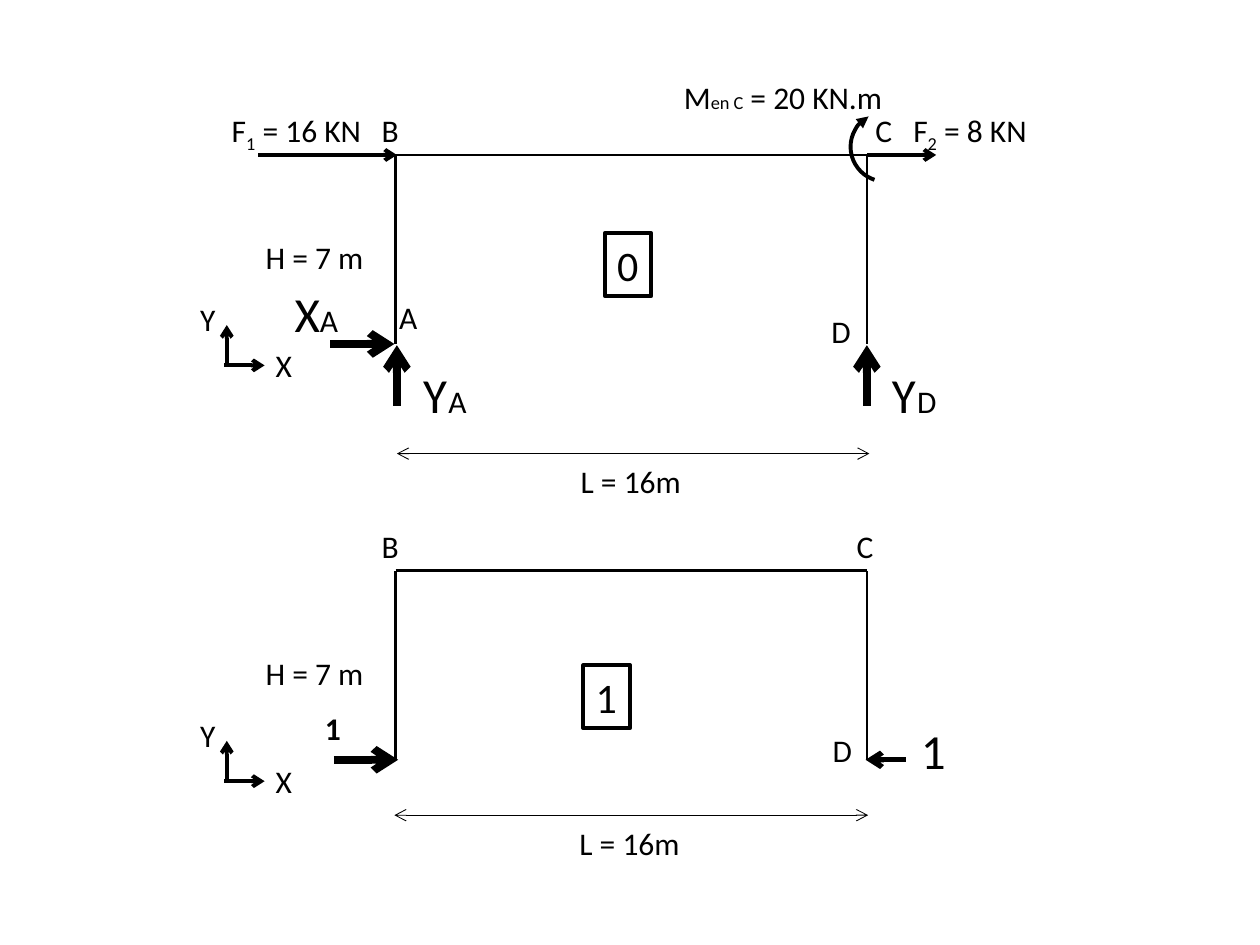
from dataclasses import dataclass

from lxml.etree import SubElement
from pptx import Presentation
from pptx.dml.color import RGBColor
from pptx.enum.shapes import MSO_CONNECTOR as Conn, MSO_SHAPE as Kind
from pptx.enum.text import MSO_ANCHOR as Anchor, MSO_AUTO_SIZE as Fit, PP_ALIGN as Align
from pptx.oxml.ns import qn
from pptx.util import Inches, Pt

INK = "000000"
LEFT, RIGHT = 3.14, 6.88
TOPS = (1.23, 4.53)
HIGH = 1.5


@dataclass
class Run:
    text: str
    size: float = 18
    bold: bool = False
    base: int = 0


@dataclass
class Label:
    x: float
    y: float
    w: float
    runs: list[Run]
    h: float = 0.4


@dataclass
class Line:
    x1: float
    y1: float
    x2: float
    y2: float
    width: float = 1.5
    head: str = ""
    tail: str = ""


def paint(target, color: str) -> None:
    """Colour a font or the fill of a line."""
    rgb = RGBColor.from_string(color)
    if hasattr(target, "color"):
        target.color.rgb = rgb
    else:
        target.solid()
        target.fore_color.rgb = rgb


def set_line(shape, width: float, head: str = "", tail: str = "") -> None:
    paint(shape.line.fill, INK)
    shape.line.width = Pt(width)
    ln = shape.line.fill._xPr
    for tag, kind in (("a:headEnd", head), ("a:tailEnd", tail)):
        if kind:
            SubElement(ln, qn(tag)).set("type", kind)


def draw_line(shapes, line: Line) -> None:
    ends = [Inches(v) for v in (line.x1, line.y1, line.x2, line.y2)]
    link = shapes.add_connector(Conn.STRAIGHT, *ends)
    set_line(link, line.width, line.head, line.tail)
    SubElement(link._element.spPr, qn("a:effectLst"))


def arrow(shapes, x1: float, y1: float, x2: float, y2: float, width: float) -> None:
    draw_line(shapes, Line(x1, y1, x2, y2, width, tail="arrow"))


def fill_text(shape, runs: list[Run]) -> None:
    frame = shape.text_frame
    frame.word_wrap = False
    frame.auto_size = Fit.SHAPE_TO_FIT_TEXT
    frame.vertical_anchor = Anchor.TOP
    par = frame.paragraphs[0]
    par.alignment = Align.LEFT
    for part in runs:
        run = par.add_run()
        run.text = part.text
        font = run.font
        font.name, font.size, font.bold = "Calibri", Pt(part.size), part.bold
        paint(font, INK)
        if part.base:
            font._element.set("baseline", str(part.base * 1000))


def draw_label(shapes, label: Label) -> None:
    place = [Inches(v) for v in (label.x, label.y, label.w, label.h)]
    fill_text(shapes.add_textbox(*place), label.runs)


def word(shapes, x: float, y: float, w: float, text: str) -> None:
    draw_label(shapes, Label(x, y, w, [Run(text)]))


def draw_case(shapes, x: float, y: float, text: str) -> None:
    """Draw the framed number of a load case."""
    box = shapes.add_shape(Kind.RECTANGLE, Inches(x), Inches(y), Inches(0.37), Inches(0.5))
    box.shadow.inherit = False
    box.fill.background()
    set_line(box, 2.25)
    fill_text(box, [Run(text, 24)])


def draw_frame(shapes, top: float) -> None:
    """Draw columns, beam, axes and the labels both frames share."""
    foot = top + HIGH
    for x in (LEFT, RIGHT):
        draw_line(shapes, Line(x, foot, x, top))
    draw_line(shapes, Line(LEFT, top, RIGHT, top))
    word(shapes, 2.93, top - 0.4, 0.34, "B")
    word(shapes, 2.01, top + 0.61, 0.99, "H = 7 m")
    arrow(shapes, 1.8, top + 1.68, 1.8, top + 1.35, 2.25)
    arrow(shapes, 1.78, top + 1.67, 2.1, top + 1.67, 2.25)
    word(shapes, 1.49, top + 1.1, 0.32, "Y")
    word(shapes, 2.09, top + 1.47, 0.33, "X")


def draw_span(shapes, x1: float, x2: float, y: float, text_x: float) -> None:
    draw_line(shapes, Line(x1, y, x2, y, 0.5, "arrow", "arrow"))
    word(shapes, text_x, y + 0.02, 1.01, "L = 16m")


def draw_force(shapes, x: float, y: float, name: str, node: str) -> None:
    """Draw a reaction's large letter and its small node letter."""
    word(shapes, x + 0.2, y + 0.14, 0.36, node)
    draw_label(shapes, Label(x, y, 0.41, [Run(name, 28)], 0.57))


def draw_moment(shapes) -> None:
    arc = shapes.add_shape(Kind.ARC, Inches(6.75), Inches(0.89), Inches(0.55), Inches(0.55))
    arc.shadow.inherit = False
    arc.fill.background()
    arc.adjustments[0], arc.adjustments[1] = 179.22, 43.18
    arc.rotation = 180
    arc._element.spPr.xfrm.set("flipV", "1")
    set_line(arc, 2.25, head="triangle")


def draw_loaded(shapes, top: float) -> None:
    foot = top + HIGH
    draw_frame(shapes, top)
    arrow(shapes, 2.05, top, 3.15, top, 2.25)
    arrow(shapes, RIGHT, top, 7.43, top, 2.25)
    draw_moment(shapes)
    moment = [Run("M"), Run("en C", 10.5), Run(" = 20 KN.m")]
    draw_label(shapes, Label(5.33, 0.57, 1.8, moment))
    for x, w, sub, load in ((1.74, 1.25, "1", " = 16 KN"), (7.15, 1.13, "2", " = 8 KN")):
        runs = [Run("F"), Run(sub, base=-25), Run(load)]
        draw_label(shapes, Label(x, top - 0.4, w, runs))
    word(shapes, 3.07, 2.32, 0.35, "A")
    word(shapes, 6.5, 2.43, 0.36, "D")
    word(shapes, 6.85, top - 0.4, 0.34, "C")
    draw_case(shapes, 4.8, 1.85, "0")
    arrow(shapes, 2.62, foot, 3.13, foot, 4.5)
    for x in (3.15, RIGHT):
        arrow(shapes, x, 3.22, x, 2.74, 4.5)
    draw_force(shapes, 2.24, 2.2, "X", "A")
    draw_force(shapes, 3.26, 2.84, "Y", "A")
    draw_force(shapes, 6.98, 2.84, "Y", "D")
    draw_span(shapes, 3.15, 6.9, 3.6, 4.51)


def draw_unit(shapes, top: float) -> None:
    foot = top + HIGH
    draw_frame(shapes, top)
    word(shapes, 6.7, top - 0.4, 0.34, "C")
    word(shapes, 6.51, 5.75, 0.36, "D")
    draw_case(shapes, 4.63, 5.28, "1")
    arrow(shapes, 2.65, foot, 3.16, foot, 4.5)
    draw_label(shapes, Label(2.48, 5.58, 0.33, [Run("1", bold=True)]))
    arrow(shapes, 7.19, foot, 6.87, foot, 3)
    draw_label(shapes, Label(7.21, 5.67, 0.41, [Run("1", 28)], 0.57))
    draw_span(shapes, 3.13, 6.89, 6.47, 4.5)


def main() -> None:
    deck = Presentation()
    deck.slide_width, deck.slide_height = Inches(10), Inches(7.5)
    shapes = deck.slides.add_slide(deck.slide_layouts[6]).shapes
    draw_loaded(shapes, TOPS[0])
    draw_unit(shapes, TOPS[1])
    deck.save("out.pptx")


if __name__ == "__main__":
    main()
